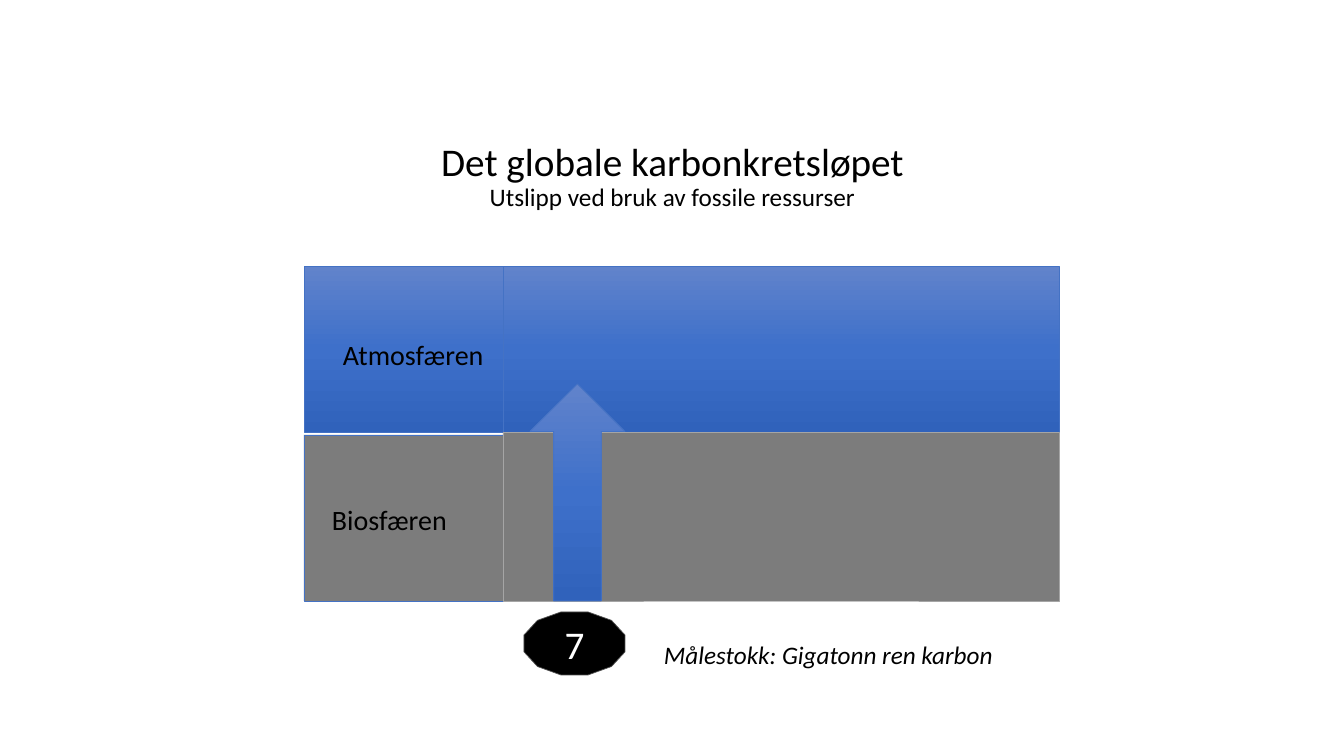
"""Build the slide on the global carbon cycle and fossil emissions."""
from copy import deepcopy
from dataclasses import dataclass

from pptx import Presentation
from pptx.dml.color import RGBColor
from pptx.enum.shapes import MSO_SHAPE
from pptx.enum.text import MSO_ANCHOR, MSO_AUTO_SIZE, PP_ALIGN
from pptx.oxml.ns import qn
from pptx.util import Pt

EMU_PER_PX = 914400 / 100.8
SLIDE_SIZE = (1344, 756)


@dataclass(frozen=True)
class Theme:
    font: str = "Calibri"
    text: str = "000000"
    inverse: str = "FFFFFF"
    badge: str = "000000"
    badge_line: str = "525252"
    earth: str = "7C7C7C"
    earth_line: str = "A5A5A5"
    blue_line: str = "4472C4"
    sky: tuple = ("6183CB", "3E70CA", "3062BB")
    heading: int = 28
    label: int = 20
    small: int = 18
    line_width: float = 0.5


THEME = Theme()

TITLE_BOX = (244, 55, 857, 162)
TITLE_LINES = [
    ("Det globale karbonkretsløpet", THEME.heading),
    ("Utslipp ved bruk av fossile ressurser", THEME.small),
]

LEFT, MIDDLE, RIGHT = 304, 503, 1059
SKY_TOP, SKY_BOTTOM, EARTH_BOTTOM = 266, 432, 601
EARTH_GAP = 3
SKY_HEIGHT = SKY_BOTTOM - SKY_TOP
EARTH_HEIGHT = EARTH_BOTTOM - SKY_BOTTOM

BLOCKS = [
    (MSO_SHAPE.RECTANGLE, (LEFT, SKY_TOP, MIDDLE - LEFT, SKY_HEIGHT), THEME.sky, THEME.blue_line),
    (MSO_SHAPE.RECTANGLE, (LEFT, SKY_BOTTOM + EARTH_GAP, MIDDLE - LEFT, EARTH_HEIGHT - EARTH_GAP),
     THEME.earth, THEME.blue_line),
    (MSO_SHAPE.RECTANGLE, (MIDDLE, SKY_TOP, RIGHT - MIDDLE, SKY_HEIGHT), THEME.sky, THEME.blue_line),
    (MSO_SHAPE.RECTANGLE, (MIDDLE, SKY_BOTTOM, RIGHT - MIDDLE, EARTH_HEIGHT),
     THEME.earth, THEME.earth_line),
]
ARROW = (MSO_SHAPE.UP_ARROW, (530, 384, 95, EARTH_BOTTOM - 384), THEME.sky, THEME.blue_line)
BADGE = (MSO_SHAPE.DODECAGON, (524, 612, 101, 63), THEME.badge, THEME.badge_line)
BADGE_TEXT = "7"

LABELS = [
    ("Atmosfæren", (333, 333, 170, 44), {"size": Pt(THEME.label)}),
    ("Biosfæren", (322, 498, 150, 44), {"size": Pt(THEME.label)}),
]
SCALE_NOTE = ("Målestokk: Gigatonn ren karbon", (654, 634, 405, 40),
              {"size": Pt(THEME.small), "italic": True})


def emu(box):
    """Turn px lengths into EMU."""
    return [round(length * EMU_PER_PX) for length in box]


def apply(target, values):
    """Set attributes from a dict."""
    for name, value in values.items():
        setattr(target, name, value)


def add_run(paragraph, text, values, color=THEME.text):
    """Add a formatted run."""
    run = paragraph.add_run()
    run.text = text
    apply(run.font, {"name": THEME.font, **values})
    run.font.color.rgb = RGBColor.from_string(color)


def fill_gradient(shape, colors):
    """Fill a shape from top to bottom with evenly spaced colours."""
    shape.fill.gradient()
    shape.fill.gradient_angle = 270
    stop_list = shape._element.spPr.find(qn("a:gradFill")).find(qn("a:gsLst"))
    while len(stop_list) < len(colors):
        stop_list.append(deepcopy(stop_list[0]))
    for index, (stop, color) in enumerate(zip(shape.fill.gradient_stops, colors)):
        stop.color.rgb = RGBColor.from_string(color)
        stop.position = index / (len(colors) - 1)


def add_block(slide, kind, box, fill, line):
    """Add a preset shape with a solid or gradient fill."""
    shape = slide.shapes.add_shape(kind, *emu(box))
    shape.shadow.inherit = False
    if isinstance(fill, tuple):
        fill_gradient(shape, fill)
    else:
        shape.fill.solid()
        shape.fill.fore_color.rgb = RGBColor.from_string(fill)
    shape.line.color.rgb = RGBColor.from_string(line)
    shape.line.width = Pt(THEME.line_width)
    return shape


def add_label(slide, text, box, values):
    """Add a wrapping text box."""
    frame = slide.shapes.add_textbox(*emu(box)).text_frame
    apply(frame, {"word_wrap": True, "auto_size": MSO_AUTO_SIZE.SHAPE_TO_FIT_TEXT})
    add_run(frame.paragraphs[0], text, values)


def set_title(slide):
    """Place and fill the title placeholder."""
    title = slide.shapes.title
    apply(title, dict(zip(("left", "top", "width", "height"), emu(TITLE_BOX))))
    apply(title.text_frame, {"word_wrap": True, "auto_size": MSO_AUTO_SIZE.NONE,
                             "vertical_anchor": MSO_ANCHOR.BOTTOM})
    paragraph = title.text_frame.paragraphs[0]
    apply(paragraph, {"alignment": PP_ALIGN.CENTER, "line_spacing": 0.9})
    for index, (text, size) in enumerate(TITLE_LINES):
        if index:
            paragraph.add_line_break()
        add_run(paragraph, text, {"size": Pt(size)})


def main():
    """Build and save the presentation."""
    presentation = Presentation()
    apply(presentation, dict(zip(("slide_width", "slide_height"), emu(SLIDE_SIZE))))
    slide = presentation.slides.add_slide(presentation.slide_layouts[5])
    set_title(slide)
    for block in BLOCKS:
        add_block(slide, *block)
    for label in LABELS:
        add_label(slide, *label)
    add_block(slide, *ARROW)
    badge = add_block(slide, *BADGE)
    badge.text_frame.vertical_anchor = MSO_ANCHOR.MIDDLE
    paragraph = badge.text_frame.paragraphs[0]
    paragraph.alignment = PP_ALIGN.CENTER
    add_run(paragraph, BADGE_TEXT, {"size": Pt(THEME.heading)}, THEME.inverse)
    add_label(slide, *SCALE_NOTE)
    presentation.save("out.pptx")


if __name__ == "__main__":
    main()
